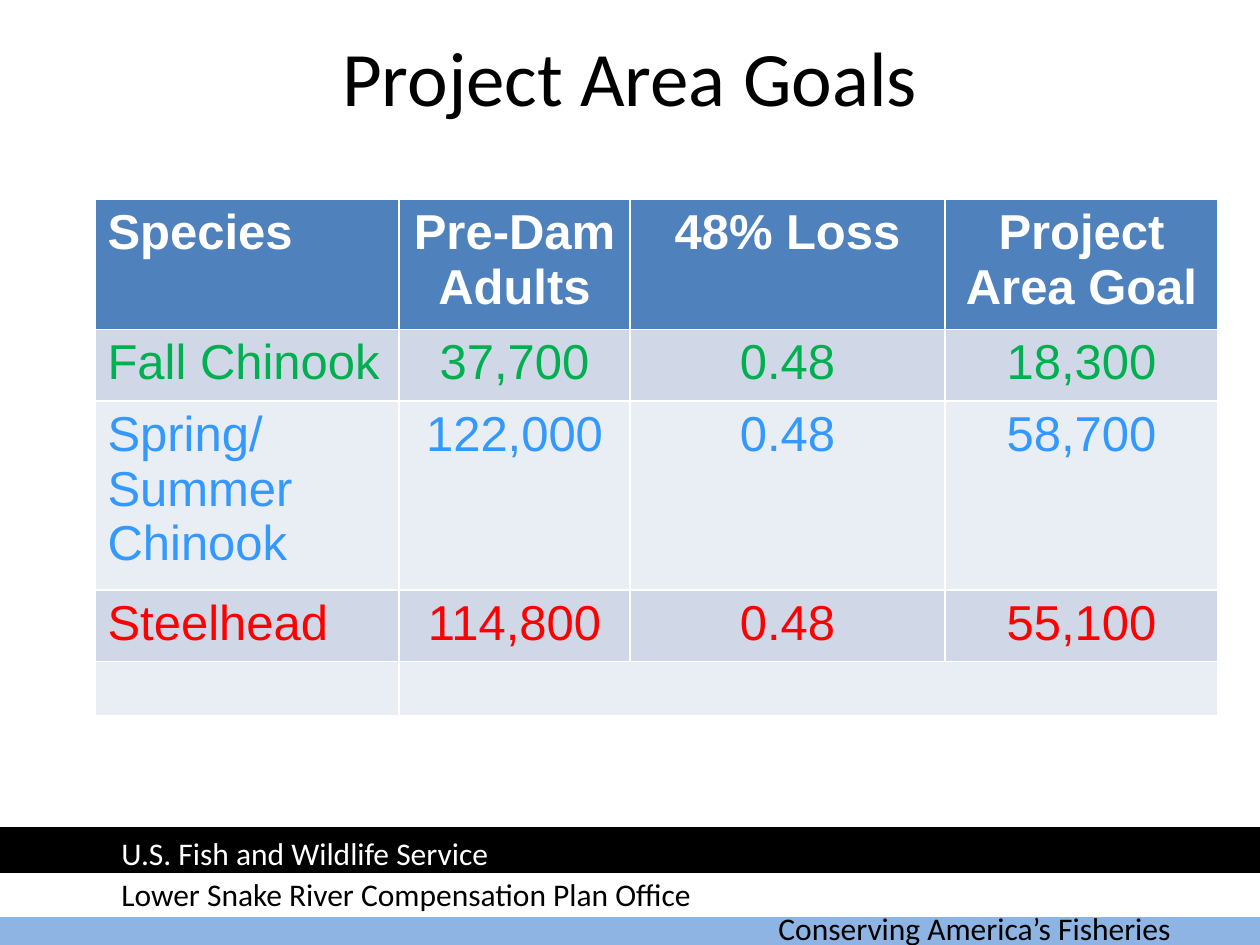
from pptx import Presentation
from pptx import util as u
from pptx.dml.color import RGBColor
from pptx.enum import shapes, text


def px(n):
    return u.Emu(round(n * 914400 / 126))


def style(p, value, size, font, color, bold=False, align=text.PP_ALIGN.LEFT):
    p.alignment = align
    r = p.add_run()
    r.text = value
    for name, v in {"size": u.Pt(size), "name": font, "bold": bold}.items():
        setattr(r.font, name, v)
    r.font.color.rgb = RGBColor.from_string(color)


prs = Presentation()
prs.slide_width, prs.slide_height = px(1260), px(945)
s = prs.slides.add_slide(prs.slide_layouts[5])

bars = [(-1, 903, "8EB4E3"), (0, 873, "FFFFFF"), (0, 829, "000000")]
for x, y, color in bars:
    sp = s.shapes.add_shape(shapes.MSO_SHAPE.RECTANGLE, px(x), px(y), px(1260), px(42))
    sp.shadow.inherit = False
    sp.fill.solid()
    sp.fill.fore_color.rgb = RGBColor.from_string(color)
    sp.line.color.rgb = RGBColor.from_string(color)
    sp.line.width = u.Pt(2)

labels = [
    (766, 903, 462, "Conserving America’s Fisheries", "000000"),
    (109, 828, 524, "U.S. Fish and Wildlife Service", "FFFFFF"),
    (109, 869, 626, "Lower Snake River Compensation Plan Office", "000000"),
]
for x, y, w, label, color in labels:
    tf = s.shapes.add_textbox(px(x), px(y), px(w), px(50)).text_frame
    tf.word_wrap = True
    tf.auto_size = text.MSO_AUTO_SIZE.SHAPE_TO_FIT_TEXT
    style(tf.paragraphs[0], label, 18, "Calibri", color)

title = s.shapes.title
box = {"left": 63, "top": 21, "width": 1134, "height": 110}
for name, n in box.items():
    setattr(title, name, px(n))
title.text_frame.vertical_anchor = text.MSO_ANCHOR.MIDDLE
style(title.text_frame.paragraphs[0], "Project Area Goals", 44, "Calibri", "000000",
      align=text.PP_ALIGN.CENTER)

rows = [
    (121, "4F81BD", "FFFFFF", ["Species", "Pre-Dam Adults", "48% Loss", "Project Area Goal"]),
    (67, "D0D8E8", "00B050", ["Fall Chinook", "37,700", "0.48", "18,300"]),
    (177, "E9EDF4", "3399FF", ["Spring/Summer Chinook", "122,000", "0.48", "58,700"]),
    (67, "D0D8E8", "FF0000", ["Steelhead", "114,800", "0.48", "55,100"]),
    (54, "E9EDF4", "000000", ["", "", "", ""]),
]
widths = [304, 231, 315, 273]
table = s.shapes.add_table(len(rows), len(widths), px(95), px(199),
                           px(sum(widths)), px(sum(row[0] for row in rows))).table
for column, w in zip(table.columns, widths):
    column.width = px(w)
for i, (height, fill, color, values) in enumerate(rows):
    table.rows[i].height = px(height)
    for j, value in enumerate(values):
        cell = table.cell(i, j)
        cell.fill.solid()
        cell.fill.fore_color.rgb = RGBColor.from_string(fill)
        if value:
            align = text.PP_ALIGN.CENTER if j else text.PP_ALIGN.LEFT
            style(cell.text_frame.paragraphs[0], value, 28, "Arial", color, i == 0, align)
table.cell(4, 1).merge(table.cell(4, 3))

prs.save("out.pptx")
